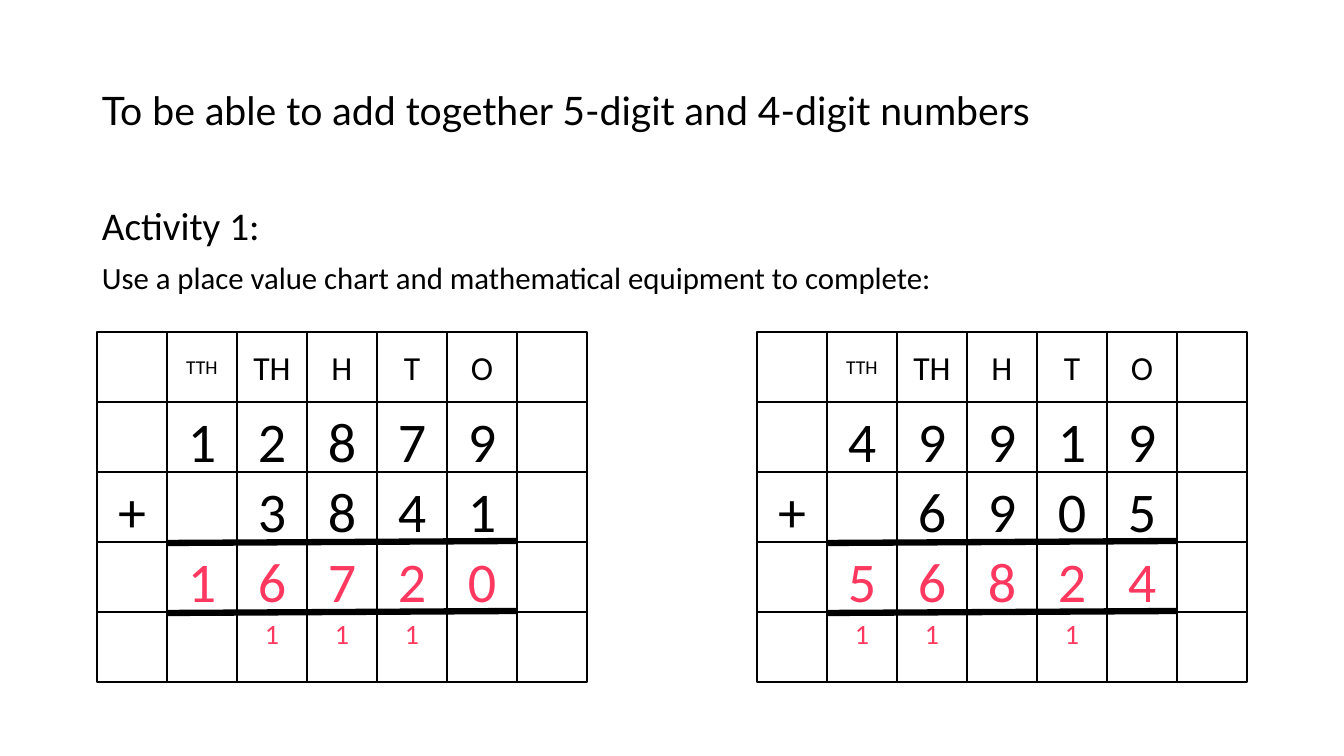
from dataclasses import dataclass
from lxml.etree import SubElement
from pptx import Presentation
from pptx.dml.color import RGBColor
from pptx.enum.shapes import MSO_CONNECTOR, MSO_SHAPE
from pptx.enum.text import MSO_ANCHOR, PP_ALIGN
from pptx.oxml.ns import qn
from pptx.util import Emu, Pt


@dataclass(frozen=True)
class Theme:
    ink: str = "000000"
    paper: str = "FFFFFF"
    answer: str = "FF3860"
    title: str = "Lato"
    body: str = "Calibri"
    head: int = 28
    task: int = 22
    digit: int = 40
    label: int = 24
    small: int = 14
    carry: int = 20


THEME = Theme()
SIZE = 70
TOP = 332
HEADS = ["", "TTH", "TH", "H", "T", "O", ""]


def px(count):
    return Emu(round(count * 914400 / 100.8))


def color(code):
    return RGBColor.from_string(code)


def write(frame, *lines, sizes, font=THEME.body, ink=THEME.ink,
          align=PP_ALIGN.LEFT, anchor=MSO_ANCHOR.TOP, lead=1.0, gap=0):
    frame.word_wrap = True
    frame.vertical_anchor = anchor
    for order, (line, size) in enumerate(zip(lines, sizes)):
        para = frame.add_paragraph() if order else frame.paragraphs[0]
        para.alignment = align
        para.line_spacing = lead
        para.space_before = Pt(gap if order else 0)
        run = para.add_run()
        run.text = line
        run.font.name = font
        run.font.size = Pt(size)
        run.font.color.rgb = color(ink)


def block(slide, left, top, width, height, *lines, **style):
    box = slide.shapes.add_textbox(px(left), px(top), px(width), px(height))
    write(box.text_frame, *lines, lead=0.9, **style)


def cell(slide, left, top, text, **style):
    box = slide.shapes.add_shape(
        MSO_SHAPE.RECTANGLE, px(left), px(top), px(SIZE), px(SIZE))
    box.shadow.inherit = False
    box.fill.solid()
    box.fill.fore_color.rgb = color(THEME.paper)
    box.line.color.rgb = color(THEME.ink)
    box.line.width = Pt(1)
    if text:
        write(box.text_frame, text, align=PP_ALIGN.CENTER, **style)


def rule(slide, left, top):
    line = slide.shapes.add_connector(
        MSO_CONNECTOR.STRAIGHT, px(left), px(top + 1),
        px(left + 5 * SIZE), px(top - 1))
    line.line.color.rgb = color(THEME.ink)
    line.line.width = Pt(4.5)
    SubElement(line._element.spPr, qn("a:effectLst"))


def chart(slide, left, first, second, total, carry):
    for col, text in enumerate(HEADS):
        size = THEME.small if text == "TTH" else THEME.label
        cell(slide, left + col * SIZE, TOP, text,
             sizes=[size], anchor=MSO_ANCHOR.MIDDLE)
    rows = [
        (first, THEME.digit, THEME.ink),
        (second, THEME.digit, THEME.ink),
        (total, THEME.digit, THEME.answer),
        (carry, THEME.carry, THEME.answer),
    ]
    for row, (marks, size, ink) in enumerate(rows, 1):
        for col, mark in enumerate(marks):
            cell(slide, left + col * SIZE, TOP + row * SIZE, mark.strip(),
                 sizes=[size], ink=ink)
    for row in (3, 4):
        rule(slide, left + SIZE, TOP + row * SIZE)


def main():
    deck = Presentation()
    deck.slide_width, deck.slide_height = px(1344), px(756)
    slide = deck.slides.add_slide(deck.slide_layouts[6])
    block(slide, 92, 40, 968, 146,
          "To be able to add together 5-digit and 4-digit numbers",
          sizes=[THEME.head], font=THEME.title, anchor=MSO_ANCHOR.MIDDLE)
    block(slide, 92, 202, 1159, 120,
          "Activity 1:",
          "Use a place value chart and mathematical equipment to complete:",
          sizes=[THEME.head, THEME.task], gap=10)
    chart(slide, 757, " 49919 ", "+ 6905 ", " 56824 ", " 11 1  ")
    chart(slide, 97, " 12879 ", "+ 3841 ", " 16720 ", "  111  ")
    deck.save("out.pptx")


if __name__ == "__main__":
    main()
